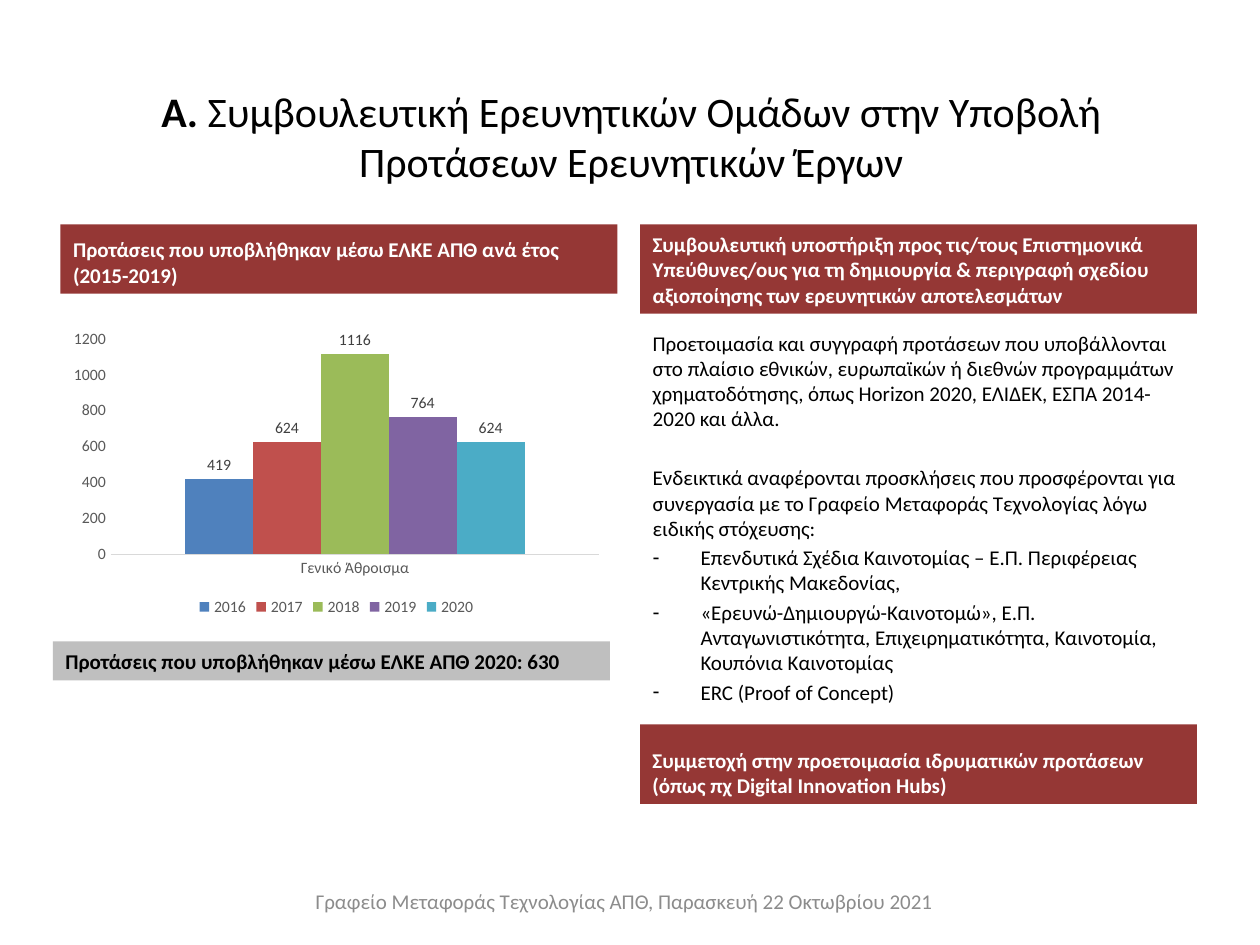
from pptx import Presentation
from pptx.chart.data import CategoryChartData
from pptx.dml.color import RGBColor
from pptx.enum.chart import XL_CHART_TYPE, XL_LABEL_POSITION, XL_LEGEND_POSITION, XL_TICK_MARK
from pptx.enum.text import MSO_ANCHOR, MSO_AUTO_SIZE, PP_ALIGN
from pptx.oxml.ns import qn
from pptx.util import Inches, Pt
from lxml.etree import SubElement

# Content
TITLE = [("Α. ", True),
         ("Συμβουλευτική Ερευνητικών Ομάδων στην Υποβολή Προτάσεων Ερευνητικών Έργων", False)]
YEARS = "Προτάσεις που υποβλήθηκαν μέσω ΕΛΚΕ ΑΠΘ ανά έτος (2015-2019)"
ADVICE = ("Συμβουλευτική υποστήριξη προς τις/τους Επιστημονικά Υπεύθυνες/ους για τη "
          "δημιουργία & περιγραφή σχεδίου αξιοποίησης των ερευνητικών αποτελεσμάτων")
TOTAL = "Προτάσεις που υποβλήθηκαν μέσω ΕΛΚΕ ΑΠΘ 2020: 630"
HUBS = "Συμμετοχή στην προετοιμασία ιδρυματικών προτάσεων (όπως πχ Digital Innovation Hubs)"
FOOT = "Γραφείο Μεταφοράς Τεχνολογίας ΑΠΘ, Παρασκευή 22 Οκτωβρίου 2021"
INTRO = [
    "Προετοιμασία και συγγραφή προτάσεων που υποβάλλονται στο πλαίσιο εθνικών, ευρωπαϊκών ή "
    "διεθνών προγραμμάτων χρηματοδότησης, όπως Horizon 2020, ΕΛΙΔΕΚ, ΕΣΠΑ 2014-2020 και άλλα.",
    "Ενδεικτικά αναφέρονται προσκλήσεις που προσφέρονται για συνεργασία με το Γραφείο "
    "Μεταφοράς Τεχνολογίας λόγω ειδικής στόχευσης:",
]
CALLS = [
    "Επενδυτικά Σχέδια Καινοτομίας – Ε.Π. Περιφέρειας Κεντρικής Μακεδονίας,",
    "«Ερευνώ-Δημιουργώ-Καινοτομώ», Ε.Π. Ανταγωνιστικότητα, Επιχειρηματικότητα, Καινοτομία, "
    "Κουπόνια Καινοτομίας",
    "ERC (Proof of Concept)",
]
GROUP = "Γενικό Άθροισμα"
COUNTS = [("2016", 419, "4F81BD"), ("2017", 624, "C0504D"), ("2018", 1116, "9BBB59"),
          ("2019", 764, "8064A2"), ("2020", 624, "4BACC6")]

# Theme and grid
THEME = {"font": "Calibri", "head": 24, "text": 12, "small": 9, "ink": "000000",
         "white": "FFFFFF", "red": "953735", "gray": "BFBFBF", "foot": "8C8C8C",
         "axis": "595959", "label": "404040", "rule": "D9D9D9"}
LEFT, RIGHT, WIDE = 0.48, 5.08, 4.42
TOP, MID = 1.78, 2.57


def style(font, size="text", color="ink", bold=False):
    look = {"name": THEME["font"], "size": Pt(THEME[size]), "bold": bold}
    for key, val in look.items():
        setattr(font, key, val)
    font.color.rgb = RGBColor.from_string(THEME[color])


def place(shape, *box):
    for key, val in zip(("left", "top", "width", "height"), box):
        setattr(shape, key, Inches(val))


def frame(shape, anchor):
    look = {"word_wrap": True, "auto_size": MSO_AUTO_SIZE.NONE, "vertical_anchor": anchor}
    for key, val in look.items():
        setattr(shape.text_frame, key, val)
    return shape.text_frame


def write(shape, text, anchor, color="ink", bold=False, fill=None, align=None):
    para = frame(shape, anchor).paragraphs[0]
    run = para.add_run()
    run.text = text
    para.alignment = align
    para.space_before = Pt(0)
    style(run.font, color=color, bold=bold)
    if fill:
        shape.fill.solid()
        shape.fill.fore_color.rgb = RGBColor.from_string(THEME[fill])


def bullet(para, mark=None):
    props = para._p.get_or_add_pPr()
    hang = Inches(0.38) if mark else 0
    props.set("marL", str(hang))
    props.set("indent", str(-hang))
    if mark:
        SubElement(props, qn("a:buFontTx"))
        SubElement(props, qn("a:buChar")).set("char", mark)
    else:
        SubElement(props, qn("a:buNone"))


def box(slide, *spot):
    return slide.shapes.add_textbox(*map(Inches, spot))


def fill_list(shape):
    body = frame(shape, MSO_ANCHOR.TOP)
    rows = [(text, None) for text in INTRO] + [(text, "-") for text in CALLS]
    for i, (text, mark) in enumerate(rows):
        para = body.paragraphs[0] if i == 0 else body.add_paragraph()
        bullet(para, mark)
        # A wide gap parts the two opening paragraphs
        para.space_before = Pt({0: 0, 1: 19.4}.get(i, 2.4))
        run = para.add_run()
        run.text = text
        style(run.font)


def add_bars(slide):
    data = CategoryChartData()
    data.categories = [GROUP]
    for year, count, _ in COUNTS:
        data.add_series(year, [count])
    spot = map(Inches, (0.5, MID, 4.34, 2.36))
    chart = slide.shapes.add_chart(XL_CHART_TYPE.COLUMN_CLUSTERED, *spot, data).chart
    style(chart.font, "small", "axis")
    chart.has_title = False
    chart.has_legend = True
    chart.legend.position = XL_LEGEND_POSITION.BOTTOM
    chart.legend.include_in_layout = False
    style(chart.legend.font, "small", "axis")
    for axis in (chart.category_axis, chart.value_axis):
        axis.major_tick_mark = axis.minor_tick_mark = XL_TICK_MARK.NONE
        axis.has_major_gridlines = False
        style(axis.tick_labels.font, "small", "axis")
    rule = chart.category_axis.format.line
    rule.color.rgb = RGBColor.from_string(THEME["rule"])
    rule.width = Pt(0.75)
    scale = chart.value_axis
    scale.format.line.fill.background()
    for key, val in {"minimum_scale": 0, "maximum_scale": 1200, "major_unit": 200}.items():
        setattr(scale, key, val)
    plot = chart.plots[0]
    plot.gap_width, plot.overlap, plot.vary_by_categories = 219, 0, False
    for bar, (_, _, color) in zip(plot.series, COUNTS):
        bar.format.fill.solid()
        bar.format.fill.fore_color.rgb = RGBColor.from_string(color)
        tags = bar.data_labels
        tags.show_value = True
        tags.position = XL_LABEL_POSITION.OUTSIDE_END
        style(tags.font, "small", "label")


def main():
    deck = Presentation()
    deck.slide_width, deck.slide_height = Inches(10), Inches(7.5)
    slide = deck.slides.add_slide(deck.slide_layouts[4])
    title, left, spare, right, body = slide.placeholders
    spare.element.getparent().remove(spare.element)

    # Title
    place(title, 0.51, 0.45, 9, 1.25)
    para = frame(title, MSO_ANCHOR.MIDDLE).paragraphs[0]
    para.alignment = PP_ALIGN.CENTER
    for text, bold in TITLE:
        run = para.add_run()
        run.text = text
        style(run.font, "head", bold=bold)

    # Bands
    place(left, LEFT, TOP, WIDE, 0.55)
    place(right, RIGHT, TOP, WIDE, 0.71)
    total = box(slide, 0.42, 5.09, WIDE, 0.31)
    hubs = box(slide, RIGHT, 5.75, WIDE, 0.63)
    for shape, text, color, fill in ((left, YEARS, "white", "red"), (right, ADVICE, "white", "red"),
                                     (total, TOTAL, "ink", "gray"), (hubs, HUBS, "white", "red")):
        write(shape, text, MSO_ANCHOR.BOTTOM, color, True, fill)

    # List, chart and foot line
    place(body, RIGHT, MID, WIDE, 3.5)
    fill_list(body)
    add_bars(slide)
    write(box(slide, 0.42, 6.95, 9.07, 0.4), FOOT, MSO_ANCHOR.MIDDLE, "foot",
          align=PP_ALIGN.CENTER)
    deck.save("out.pptx")


if __name__ == "__main__":
    main()
